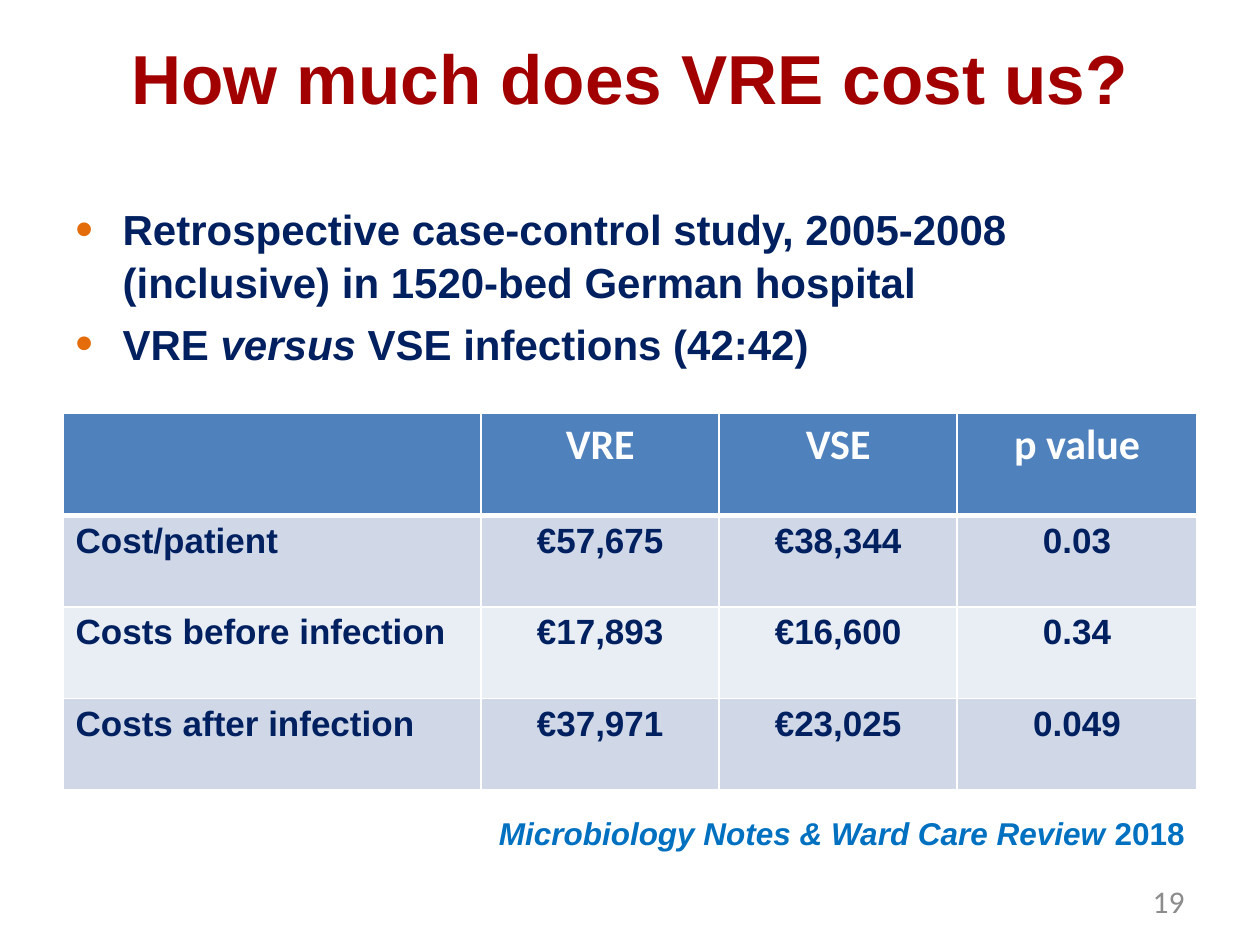
from lxml import etree
from pptx import Presentation
from pptx.dml.color import RGBColor
from pptx.enum.text import MSO_ANCHOR as Anchor, PP_ALIGN as Align
from pptx.oxml.ns import qn
from pptx.util import Pt

RED = RGBColor(0xA2, 0x00, 0x00)
NAVY = RGBColor(0x00, 0x20, 0x60)
BLUE = RGBColor(0x00, 0x70, 0xC0)
ORANGE = RGBColor(0xE4, 0x6C, 0x0A)
GREY = RGBColor(0x8C, 0x8C, 0x8C)
WHITE = RGBColor(0xFF, 0xFF, 0xFF)
HEADER_FILL = RGBColor(0x4F, 0x81, 0xBD)
BAND_FILLS = (RGBColor(0xD0, 0xD8, 0xE8), RGBColor(0xE9, 0xED, 0xF4))

STUDY_POINTS = [
    [("Retrospective case-control study, 2005-2008 (inclusive) "
      "in 1520-bed German hospital", False)],
    [("VRE ", False), ("versus", True), (" VSE infections (42:42)", False)],
]
COST_ROWS = [
    ("", "VRE", "VSE", "p value"),
    ("Cost/patient", "€57,675", "€38,344", "0.03"),
    ("Costs before infection", "€17,893", "€16,600", "0.34"),
    ("Costs after infection", "€37,971", "€23,025", "0.049"),
]
COLUMN_WIDTHS = (239, 136, 136, 137)
ROW_HEIGHTS = (58, 52.4, 52.4, 52.4)


def style_font(paragraph, size, color, name="Arial", bold=True):
    font = paragraph.font
    font.size, font.name, font.bold = Pt(size), name, bold
    font.color.rgb = color


def add_runs(paragraph, runs):
    """Add (text, italic) pairs to the paragraph."""
    for text, italic in runs:
        run = paragraph.add_run()
        run.text = text
        if italic:
            run.font.italic = True


def add_text_frame(slide, box, anchor=Anchor.TOP):
    frame = slide.shapes.add_textbox(*map(Pt, box)).text_frame
    frame.word_wrap = True
    frame.vertical_anchor = anchor
    return frame


def add_line(slide, box, runs, align, size, color, **font):
    """Add a text box that holds one vertically centred line."""
    paragraph = add_text_frame(slide, box, Anchor.MIDDLE).paragraphs[0]
    paragraph.alignment = align
    add_runs(paragraph, runs)
    style_font(paragraph, size, color, **font)


def set_bullet(paragraph, indent):
    properties = paragraph._p.get_or_add_pPr()
    properties.set("marL", str(Pt(indent)))
    properties.set("indent", str(-Pt(indent)))
    color = etree.SubElement(properties, qn("a:buClr"))
    etree.SubElement(color, qn("a:srgbClr"), val=str(ORANGE))
    etree.SubElement(properties, qn("a:buSzPct"), val="120000")
    etree.SubElement(properties, qn("a:buFont"), typeface="Arial")
    etree.SubElement(properties, qn("a:buChar"), char="•")


def add_study_points(slide, box):
    frame = add_text_frame(slide, box)
    for index, runs in enumerate(STUDY_POINTS):
        paragraph = frame.add_paragraph() if index else frame.paragraphs[0]
        paragraph.space_before = Pt(4.8)
        paragraph.line_spacing = 1.05
        set_bullet(paragraph, 27)
        add_runs(paragraph, runs)
        style_font(paragraph, 24, NAVY)


def set_borders(cell, bottom_width):
    properties = cell._tc.get_or_add_tcPr()
    widths = {"a:lnL": 1, "a:lnR": 1, "a:lnT": 1, "a:lnB": bottom_width}
    for position, (tag, width) in enumerate(widths.items()):
        line = etree.Element(qn(tag), w=str(Pt(width)))
        fill = etree.SubElement(line, qn("a:solidFill"))
        etree.SubElement(fill, qn("a:srgbClr"), val=str(WHITE))
        properties.insert(position, line)


def add_cost_table(slide, left, top):
    table = slide.shapes.add_table(
        len(COST_ROWS), len(COLUMN_WIDTHS), Pt(left), Pt(top),
        Pt(sum(COLUMN_WIDTHS)), Pt(sum(ROW_HEIGHTS))).table
    for column, width in zip(table.columns, COLUMN_WIDTHS):
        column.width = Pt(width)
    for row, height in zip(table.rows, ROW_HEIGHTS):
        row.height = Pt(height)
    for row_index, values in enumerate(COST_ROWS):
        is_header = row_index == 0
        for column_index, value in enumerate(values):
            cell = table.cell(row_index, column_index)
            cell.fill.solid()
            cell.fill.fore_color.rgb = (
                HEADER_FILL if is_header else BAND_FILLS[(row_index - 1) % 2])
            # The rule under the header is shared with the row below it.
            set_borders(cell, 3 if is_header else 1)
            cell.text = value
            paragraph = cell.text_frame.paragraphs[0]
            paragraph.alignment = Align.CENTER if column_index else Align.LEFT
            if is_header:
                style_font(paragraph, 24, WHITE, name="Calibri")
            else:
                style_font(paragraph, 20, NAVY)


def build_slide(presentation):
    slide = presentation.slides.add_slide(presentation.slide_layouts[6])
    add_line(slide, (36, 22, 648, 44),
             [("How much does VRE cost us?", False)], Align.CENTER, 39.6, RED)
    add_study_points(slide, (36, 111.6, 648, 104))
    add_cost_table(slide, 36, 236.4)
    add_line(slide, (36, 462, 648, 28),
             [("Microbiology Notes & Ward Care Review ", True),
              ("2018", False)], Align.RIGHT, 18, BLUE)
    add_line(slide, (516, 500.5, 168, 29), [("19", False)],
             Align.RIGHT, 18, GREY, name="Calibri", bold=False)


def main():
    presentation = Presentation()
    presentation.slide_width, presentation.slide_height = Pt(720), Pt(540)
    build_slide(presentation)
    presentation.save("out.pptx")


if __name__ == "__main__":
    main()
